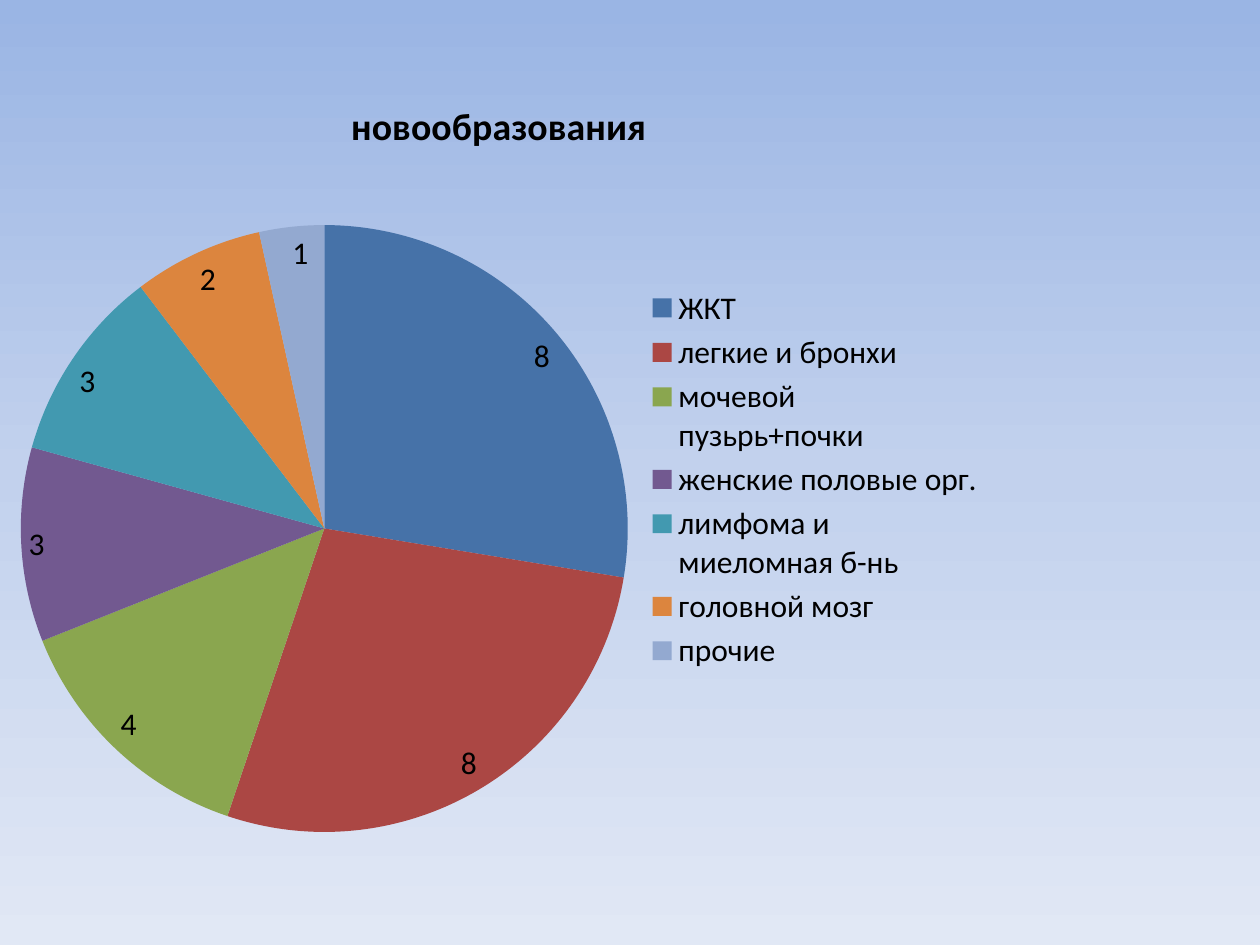
import copy

import pptx
import pptx.chart.data
import pptx.dml.color
import pptx.enum.chart
import pptx.oxml
import pptx.oxml.ns
import pptx.util

Pt = pptx.util.Pt
RGBColor = pptx.dml.color.RGBColor

BLACK = RGBColor(0x00, 0x00, 0x00)
SKY_TOP = RGBColor(0x9A, 0xB5, 0xE4)
SKY_MIDDLE = RGBColor(0xC2, 0xD1, 0xED)
SKY_BOTTOM = RGBColor(0xE1, 0xE8, 0xF5)
BLUE = RGBColor(0x46, 0x72, 0xA8)
RED = RGBColor(0xAB, 0x47, 0x44)
GREEN = RGBColor(0x8A, 0xA6, 0x4F)
PURPLE = RGBColor(0x72, 0x59, 0x90)
TEAL = RGBColor(0x42, 0x99, 0xB0)
ORANGE = RGBColor(0xDC, 0x85, 0x3E)
PALE_BLUE = RGBColor(0x93, 0xA9, 0xD0)

# Category, number of cases, slice colour
TUMOURS = [
    ("ЖКТ", 8, BLUE),
    ("легкие и бронхи", 8, RED),
    ("мочевой пузьрь+почки", 4, GREEN),
    ("женские половые орг.", 3, PURPLE),
    ("лимфома и миеломная б-нь", 3, TEAL),
    ("головной мозг", 2, ORANGE),
    ("прочие", 1, PALE_BLUE),
]


def format_font(font, name="Calibri", size=18, bold=False, color=BLACK):
    font.name = name
    font.size = Pt(size)
    font.bold = bold
    font.color.rgb = color


def write_text(text_frame, text, **font_format):
    text_frame.text = text
    format_font(text_frame.paragraphs[0].runs[0].font, **font_format)


class SlideBuilder:
    """Holds the text style and the current slide."""

    def __init__(self, slide, font_name="Calibri", text_size=18):
        self.slide = slide
        self.style = {"name": font_name, "size": text_size}

    def gradient_background(self, colors):
        fill = self.slide.background.fill
        fill.gradient()
        fill.gradient_angle = 270
        # The default gradient has two stops; add the missing ones
        stop_list = self.slide.element.find(".//" + pptx.oxml.ns.qn("a:gsLst"))
        while len(stop_list) < len(colors):
            stop_list.append(copy.deepcopy(stop_list[0]))
        for index, (stop, color) in enumerate(zip(fill.gradient_stops, colors)):
            stop.position = index / (len(colors) - 1)
            stop.color.rgb = color

    def pie_chart(self, title, rows, left, top, width, height, plot_box):
        data = pptx.chart.data.CategoryChartData()
        data.categories = [category for category, _, _ in rows]
        data.add_series(title, [value for _, value, _ in rows])
        chart = self.slide.shapes.add_chart(
            pptx.enum.chart.XL_CHART_TYPE.PIE,
            Pt(left), Pt(top), Pt(width), Pt(height), data,
        ).chart
        format_font(chart.font, **self.style)

        # Title and legend
        chart.has_title = True
        title_style = {**self.style, "size": 21.6, "bold": True}
        write_text(chart.chart_title.text_frame, title, **title_style)
        chart.chart_title.include_in_layout = False
        chart.has_legend = True
        chart.legend.position = pptx.enum.chart.XL_LEGEND_POSITION.RIGHT
        chart.legend.include_in_layout = False
        format_font(chart.legend.font, **self.style)

        # Slices and their values
        plot = chart.plots[0]
        plot.vary_by_categories = True
        for index, (_, _, color) in enumerate(rows):
            slice_fill = plot.series[0].points[index].format.fill
            slice_fill.solid()
            slice_fill.fore_color.rgb = color
        plot.has_data_labels = True
        labels = plot.data_labels
        labels.show_value = True
        labels.show_percentage = False
        labels.position = pptx.enum.chart.XL_LABEL_POSITION.INSIDE_END
        format_font(labels.font, **self.style)
        self.place_plot(chart, plot_box)

    def place_plot(self, chart, plot_box):
        """Fix the plot area, given as fractions of the chart."""
        qn = pptx.oxml.ns.qn
        plot_area = chart.element.find(".//" + qn("c:plotArea"))
        for old_layout in plot_area.findall(qn("c:layout")):
            plot_area.remove(old_layout)
        settings = {"layoutTarget": "inner", "xMode": "edge", "yMode": "edge"}
        settings.update(zip("xywh", plot_box))
        items = "".join(f'<c:{key} val="{value}"/>' for key, value in settings.items())
        plot_area.insert(0, pptx.oxml.parse_xml(
            f'<c:layout {pptx.oxml.ns.nsdecls("c")}>'
            f"<c:manualLayout>{items}</c:manualLayout></c:layout>"
        ))


def main():
    presentation = pptx.Presentation()
    presentation.slide_width = Pt(720)
    presentation.slide_height = Pt(540)
    blank_layout = presentation.slide_layouts[6]
    builder = SlideBuilder(presentation.slides.add_slide(blank_layout))

    builder.gradient_background([SKY_TOP, SKY_MIDDLE, SKY_BOTTOM])
    builder.pie_chart(
        "новообразования", TUMOURS,
        left=0, top=39.6, width=570.24, height=468.72,
        plot_box=(0.02, 0.19, 0.61, 0.74),
    )
    presentation.save("out.pptx")


if __name__ == "__main__":
    main()
